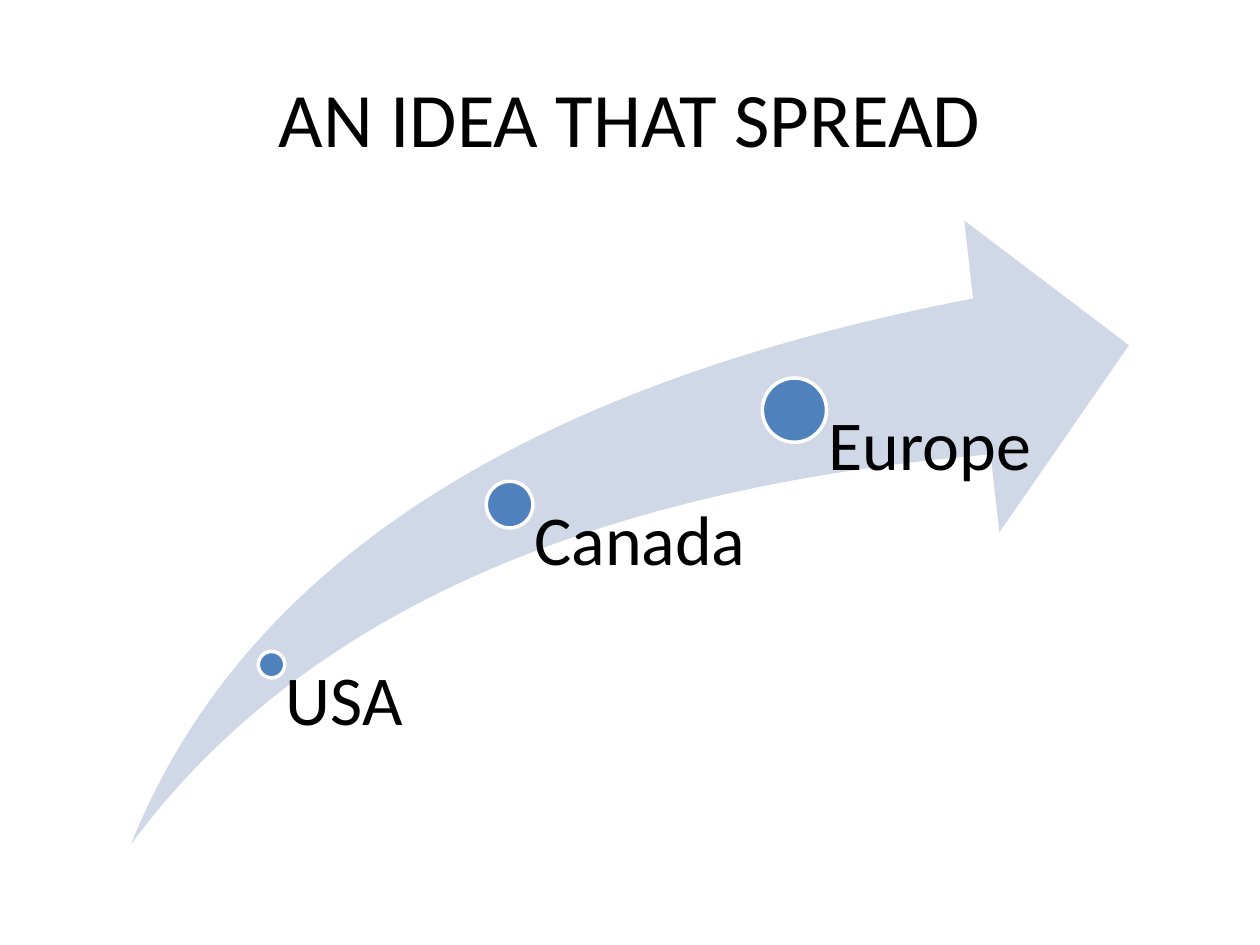
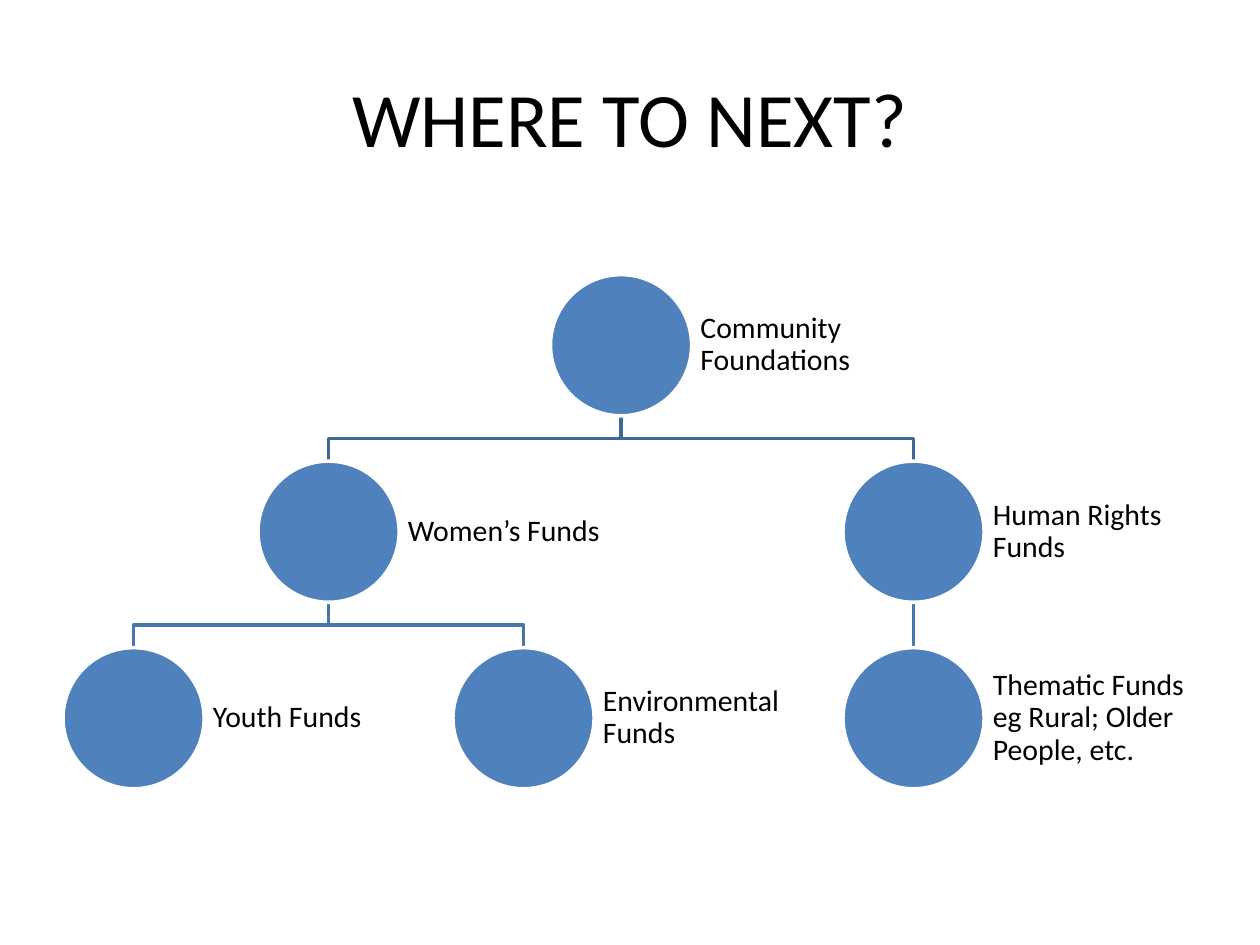
from pptx import Presentation
from pptx.dml.color import RGBColor
from pptx.enum.shapes import MSO_CONNECTOR, MSO_SHAPE
from pptx.enum.text import MSO_ANCHOR, PP_ALIGN
from pptx.oxml.ns import qn
from pptx.util import Inches, Pt
from lxml.etree import SubElement

COLORS = {
    "text": "000000",
    "background": "FFFFFF",
    "dot": "4F81BD",
    "arrow": "D0D8E8",
    "upper_line": "3F6797",
    "lower_line": "4875AC",
}
FONT = "Calibri"
LINE_WIDTH = Pt(2)


def color(name):
    return RGBColor.from_string(COLORS[name])


class PageBuilder:
    """Holds the deck, the current page and the shared style."""

    def __init__(self):
        self.deck = Presentation()
        self.deck.slide_width = Inches(10)
        self.deck.slide_height = Inches(7.5)
        self.page = None

    def new_page(self, title):
        self.page = self.deck.slides.add_slide(self.deck.slide_layouts[5])
        self.page.background.fill.solid()
        self.page.background.fill.fore_color.rgb = color("background")
        box = self.page.shapes.title
        box.left, box.top = Inches(0.5), Inches(0.3)
        box.width, box.height = Inches(9), Inches(1.25)
        box.text_frame.vertical_anchor = MSO_ANCHOR.MIDDLE
        para = box.text_frame.paragraphs[0]
        para.alignment = PP_ALIGN.CENTER
        self.span(para, title, 44)

    def span(self, para, text, size):
        span = para.add_run()
        span.text = text
        span.font.name = FONT
        span.font.size = Pt(size)
        span.font.color.rgb = color("text")

    def shape(self, kind, left, top, width, height, fill):
        shape = self.page.shapes.add_shape(
            kind, Inches(left), Inches(top), Inches(width), Inches(height))
        shape.shadow.inherit = False
        shape.fill.solid()
        shape.fill.fore_color.rgb = color(fill)
        shape.line.fill.background()
        return shape

    def dot(self, left, top, diameter):
        dot = self.shape(MSO_SHAPE.OVAL, left, top, diameter, diameter, "dot")
        dot.line.color.rgb = color("background")
        dot.line.width = LINE_WIDTH

    def label(self, text, left, top, width, height, size, insets, anchor):
        box = self.page.shapes.add_textbox(
            Inches(left), Inches(top), Inches(width), Inches(height))
        frame = box.text_frame
        frame.word_wrap = True
        frame.vertical_anchor = anchor
        (frame.margin_left, frame.margin_top,
         frame.margin_right, frame.margin_bottom) = map(Inches, insets)
        para = frame.paragraphs[0]
        para.alignment = PP_ALIGN.LEFT
        para.line_spacing = 0.9
        self.span(para, text, size)

    def branch(self, start, end, line_color):
        """Straight when the ends are aligned, otherwise stepped halfway."""
        (x1, y1), (x2, y2) = start, end
        if x1 == x2:
            line = self.page.shapes.add_connector(
                MSO_CONNECTOR.STRAIGHT, *map(Inches, (x1, y1, x2, y2)))
            SubElement(line._element.spPr, qn("a:effectLst"))
        else:
            middle = (y1 + y2) / 2
            builder = self.page.shapes.build_freeform(Inches(x1), Inches(y1))
            corners = [(x1, middle), (x2, middle), (x2, y2)]
            builder.add_line_segments(
                [(Inches(x), Inches(y)) for x, y in corners], close=False)
            line = builder.convert_to_shape()
            line.shadow.inherit = False
            line.fill.background()
        line.line.color.rgb = color(line_color)
        line.line.width = LINE_WIDTH


def build_spread(pages):
    pages.new_page("AN IDEA THAT SPREAD")
    arrow_top, arrow_height = 1.75, 4.95
    arrow = pages.shape(
        MSO_SHAPE.SWOOSH_ARROW, 1.04, arrow_top, 7.92, arrow_height, "arrow")
    arrow.adjustments[0] = arrow.adjustments[1] = 0.25

    # Each label runs from the centre of its dot to the foot of the arrow
    stops = [
        ("USA", 2.05, 5.17, 0.21, 1.85),
        ("Canada", 3.86, 3.82, 0.37, 1.9),
        ("Europe", 6.05, 3, 0.51, 1.9),
    ]
    for place, left, top, diameter, width in stops:
        radius = diameter / 2
        pages.dot(left, top, diameter)
        pages.label(place, left + radius, top + radius, width,
                    arrow_top + arrow_height - top - radius, 40,
                    (0.53 * diameter, 0, 0, 0), MSO_ANCHOR.TOP)


def build_tree(pages):
    pages.new_page("WHERE TO NEXT?")
    diameter, label_width = 1.12, 1.69
    first_left, last_left = 0.5, 6.69
    tops = [2.18 + 1.48 * level for level in range(3)]

    # Leaves are evenly spaced; every parent is centred over its children
    youth, environment, thematic = [
        first_left + column * (last_left - first_left) / 2
        for column in range(3)]
    women, rights = (youth + environment) / 2, thematic
    root = (women + rights) / 2
    funds = [
        ("Community Foundations", root, 0),
        ("Women’s Funds", women, 1),
        ("Youth Funds", youth, 2),
        ("Environmental Funds", environment, 2),
        ("Human Rights Funds", rights, 1),
        ("Thematic Funds eg Rural; Older People, etc.", thematic, 2),
    ]
    branches = [
        (rights, thematic, 1),
        (root, rights, 0),
        (women, environment, 1),
        (women, youth, 1),
        (root, women, 0),
    ]

    # Branches lie behind the circles
    for parent, child, level in branches:
        pages.branch((parent + diameter / 2, tops[level] + diameter),
                     (child + diameter / 2, tops[level + 1]),
                     ("upper_line", "lower_line")[level])
    for name, left, level in funds:
        pages.dot(left, tops[level], diameter)
        pages.label(name, left + diameter, tops[level], label_width, diameter,
                    17, (0.07,) * 4, MSO_ANCHOR.MIDDLE)


def main():
    pages = PageBuilder()
    build_spread(pages)
    build_tree(pages)
    pages.deck.save("out.pptx")


if __name__ == "__main__":
    main()
